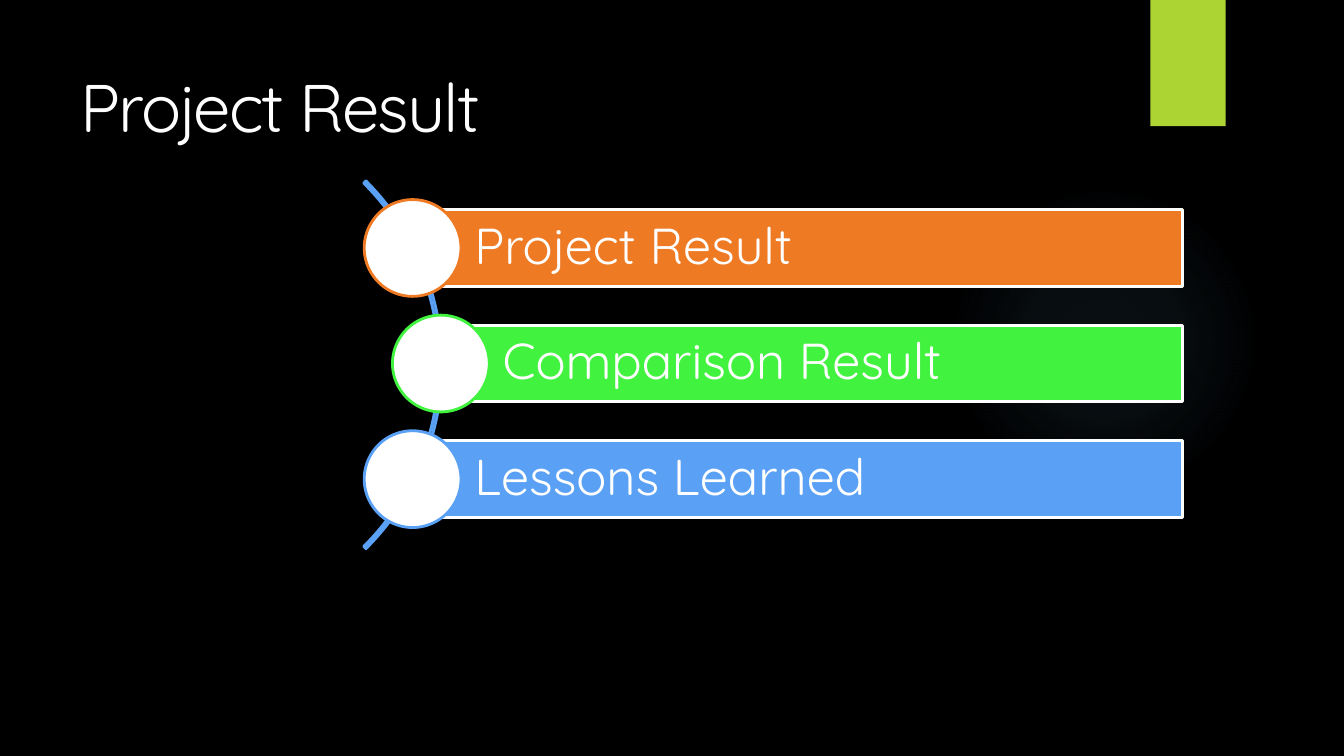
from lxml import etree
from pptx import Presentation
from pptx.dml.color import RGBColor
from pptx.enum.shapes import MSO_SHAPE as SHAPE
from pptx.enum.text import MSO_ANCHOR as ANCHOR, PP_ALIGN as ALIGN
from pptx.oxml import parse_xml
from pptx.oxml.ns import qn
from pptx.util import Inches, Pt


def rgb(color):
    return RGBColor.from_string(color)


def add_text(s, text, size=27, spacing=0, line_spacing=1.0, margins=(0.1, 0.05, 0.1, 0.05)):
    tf = s.text_frame
    tf.word_wrap = True
    tf.vertical_anchor = ANCHOR.MIDDLE
    tf.margin_left, tf.margin_top, tf.margin_right, tf.margin_bottom = map(Inches, margins)
    p = tf.paragraphs[0]
    p.alignment = ALIGN.LEFT
    p.line_spacing = line_spacing
    r = p.add_run()
    r.text = text
    r.font.name = "Quicksand"
    r.font.size = Pt(size)
    r.font.color.rgb = rgb("FFFFFF")
    if spacing:
        r.font._element.set("spc", str(spacing * 100))


prs = Presentation()
prs.slide_width = Inches(10)
prs.slide_height = Inches(10 * 9 / 16)
slide = prs.slides.add_slide(prs.slide_layouts[6])
slide.background.fill.solid()
slide.background.fill.fore_color.rgb = rgb("000000")
sp = slide.shapes

glow = sp.add_shape(SHAPE.OVAL, Inches(7.06), Inches(1.38), Inches(2.31), Inches(2.31))
glow.shadow.inherit = False
glow.line.fill.background()
glow.fill.gradient()
grad = glow._element.spPr.find(qn("a:gradFill"))
for child in list(grad):
    grad.remove(child)
stops = etree.SubElement(grad, qn("a:gsLst"))
for pos, alpha in [(0, 7), (36, 6), (69, 0)]:
    stop = etree.SubElement(stops, qn("a:gs"), pos=str(pos * 1000))
    color = etree.SubElement(stop, qn("a:srgbClr"), val="7AC4F0")
    etree.SubElement(color, qn("a:alpha"), val=str(alpha * 1000))
grad.append(parse_xml(
    '<a:path xmlns:a="http://schemas.openxmlformats.org/drawingml/2006/main" path="circle">'
    '<a:fillToRect l="50000" t="50000" r="50000" b="50000"/></a:path>'))

tab = sp.add_shape(SHAPE.RECTANGLE, Inches(8.56), 0, Inches(0.56), Inches(0.94))
tab.shadow.inherit = False
tab.fill.solid()
tab.fill.fore_color.rgb = rgb("ACD433")
tab.line.fill.background()

title = sp.add_textbox(Inches(0.5), Inches(0.31), Inches(8.33), Inches(0.96))
add_text(title, "Project Result", size=36, spacing=-1)

arc = sp.add_shape(SHAPE.BLOCK_ARC, Inches(-0.58), Inches(0.78), Inches(3.87), Inches(3.87))
arc.shadow.inherit = False
for i, value in enumerate([189, 27, 0.006]):
    arc.adjustments[i] = value
arc.fill.background()
arc.line.color.rgb = rgb("5AA0F5")
arc.line.width = Pt(1.5)

bar_h, dot, right = 0.57, 0.72, 8.8
items = [("Project Result", 3.07, "EF7A24"),
         ("Comparison Result", 3.28, "41F23F"),
         ("Lessons Learned", 3.07, "5AA0F5")]
for i, (text, left, color) in enumerate(items):
    top = 1.56 + 0.86 * i
    bar = sp.add_shape(SHAPE.RECTANGLE, Inches(left), Inches(top),
                       Inches(right - left), Inches(bar_h))
    add_text(bar, text, line_spacing=0.9, margins=(0.46, 0.07, 0.07, 0.07))
    circle = sp.add_shape(SHAPE.OVAL, Inches(left - dot / 2), Inches(top + (bar_h - dot) / 2),
                          Inches(dot), Inches(dot))
    for s, fill, line in [(bar, color, "FFFFFF"), (circle, "FFFFFF", color)]:
        s.shadow.inherit = False
        s.fill.solid()
        s.fill.fore_color.rgb = rgb(fill)
        s.line.color.rgb = rgb(line)
        s.line.width = Pt(1.5)

prs.save("out.pptx")
